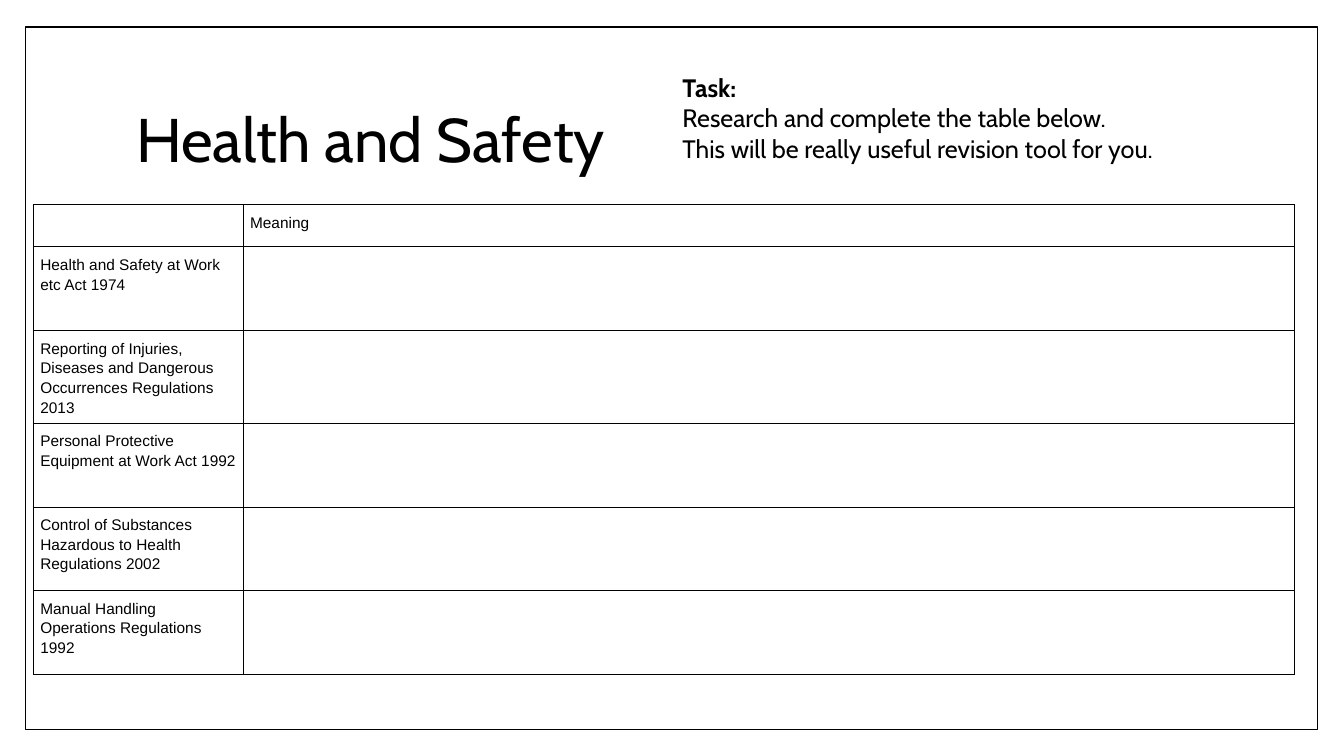
"""Build the Health and Safety research-table slide."""
from dataclasses import dataclass

from lxml.etree import SubElement
from pptx import Presentation
from pptx.dml.color import RGBColor as RGB
from pptx.enum.shapes import MSO_SHAPE as SHAPE
from pptx.enum.text import MSO_ANCHOR as ANCHOR, MSO_AUTO_SIZE as FIT, PP_ALIGN as ALIGN
from pptx.oxml.ns import qn
from pptx.slide import Slide
from pptx.table import _Cell as Cell
from pptx.text.text import _Paragraph as Paragraph
from pptx.util import Emu, Inches, Pt


@dataclass(frozen=True)
class Theme:
    """Colours, fonts and sizes of the slide."""
    ink: RGB = RGB(0, 0, 0)
    paper: RGB = RGB(255, 255, 255)
    display: str = "Cabin"
    plain: str = "Arial"
    title: int = 44
    task: int = 18
    cell: int = 11
    frame_line: float = 1
    grid_line: float = 0.75


@dataclass(frozen=True)
class Box:
    """A rectangle in inches."""
    left: float
    top: float
    width: float
    height: float

    def emu(self) -> tuple[Emu, ...]:
        """Return the rectangle as lengths."""
        return tuple(Inches(v) for v in (self.left, self.top, self.width, self.height))


@dataclass(frozen=True)
class Row:
    """One table row."""
    topic: str
    meaning: str = ""
    height: float = 0.83


THEME = Theme()
FRAME = Box(0.25, 0.27, 12.82, 6.97)
TITLE = Box(1.25, 0.67, 10.8, 1.48)
TASK = Box(6.67, 0.67, 6.66, 1.01)
COLUMNS = (2.08, 10.43)
ROWS = (
    Row("", "Meaning", 0.42),
    Row("Health and Safety at Work etc Act 1974"),
    Row("Reporting of Injuries, Diseases and Dangerous Occurrences Regulations 2013"),
    Row("Personal Protective Equipment at Work Act 1992"),
    Row("Control of Substances Hazardous to Health Regulations 2002"),
    Row("Manual Handling Operations Regulations 1992"),
)
TASK_LINES = (
    "Task:",
    "Research and complete the table below.",
    "This will be really useful revision tool for you.",
)


def style(p: Paragraph, font: str, size: int, bold: bool = False) -> None:
    """Format a paragraph."""
    p.alignment = ALIGN.LEFT
    p.font.name, p.font.size, p.font.bold = font, Pt(size), bold
    p.font.color.rgb = THEME.ink


def add_frame(s: Slide) -> None:
    """Draw the page frame behind everything else."""
    sp = s.shapes.add_shape(SHAPE.RECTANGLE, *FRAME.emu())
    sp.shadow.inherit = False
    sp.fill.solid()
    sp.fill.fore_color.rgb = THEME.paper
    sp.line.color.rgb = THEME.ink
    sp.line.width = Pt(THEME.frame_line)
    s.shapes._spTree.insert(2, sp._element)


def add_title(s: Slide) -> None:
    """Fill and place the title placeholder."""
    sp = s.shapes.title
    sp.left, sp.top, sp.width, sp.height = TITLE.emu()
    tf = sp.text_frame
    tf.text = "Health and Safety"
    tf.auto_size, tf.vertical_anchor = FIT.NONE, ANCHOR.MIDDLE
    p = tf.paragraphs[0]
    style(p, THEME.display, THEME.title)
    p.line_spacing = 0.9


def add_task(s: Slide) -> None:
    """Add the task instructions."""
    tf = s.shapes.add_textbox(*TASK.emu()).text_frame
    tf.word_wrap, tf.auto_size = True, FIT.SHAPE_TO_FIT_TEXT
    tf.text = "\n".join(TASK_LINES)
    for i, p in enumerate(tf.paragraphs):
        style(p, THEME.display, THEME.task, bold=i == 0)


def add_borders(cell: Cell) -> None:
    """Draw a line on each side of a cell."""
    props = cell._tc.get_or_add_tcPr()
    for side in "LRTB":
        line = SubElement(props, qn(f"a:ln{side}"), w=str(Pt(THEME.grid_line)))
        fill = SubElement(line, qn("a:solidFill"))
        SubElement(fill, qn("a:srgbClr"), val=str(THEME.ink))


def fill_cell(cell: Cell, text: str) -> None:
    """Write and format one cell."""
    cell.text = text
    cell.margin_left = cell.margin_right = Inches(0.07)
    cell.margin_top = cell.margin_bottom = Inches(0.07)
    add_borders(cell)
    cell.fill.background()
    p = cell.text_frame.paragraphs[0]
    style(p, THEME.plain, THEME.cell)
    p.line_spacing = 1.15


def add_research_table(s: Slide) -> None:
    """Add the table of regulations."""
    box = Box(0.33, 2.03, sum(COLUMNS), sum(row.height for row in ROWS))
    table = s.shapes.add_table(len(ROWS), len(COLUMNS), *box.emu()).table
    table.first_row = table.horz_banding = False
    for column, width in zip(table.columns, COLUMNS):
        column.width = Inches(width)
    for i, row in enumerate(ROWS):
        table.rows[i].height = Inches(row.height)
        for j, text in enumerate((row.topic, row.meaning)):
            fill_cell(table.cell(i, j), text)


def main() -> None:
    """Build and save the presentation."""
    prs = Presentation()
    prs.slide_width, prs.slide_height = Inches(13.33), Inches(7.5)
    s = prs.slides.add_slide(prs.slide_layouts[5])
    add_frame(s)
    add_title(s)
    add_research_table(s)
    add_task(s)
    prs.save("out.pptx")


if __name__ == "__main__":
    main()
